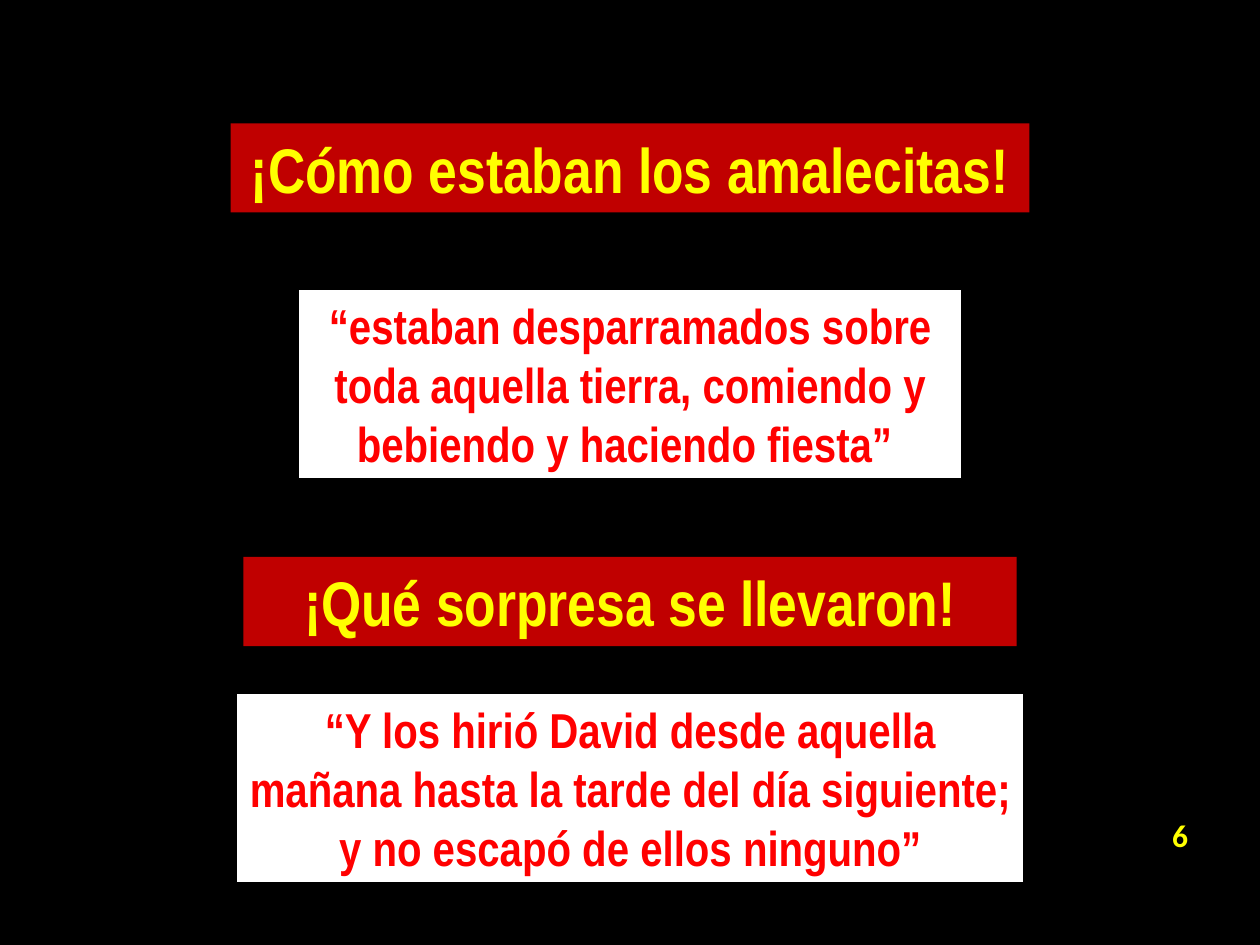
from dataclasses import dataclass

from lxml.etree import SubElement
from pptx import Presentation
from pptx.dml.color import RGBColor
from pptx.enum.shapes import MSO_SHAPE as Shape
from pptx.enum.text import MSO_ANCHOR as Anchor, MSO_AUTO_SIZE as Fit, PP_ALIGN as Align
from pptx.oxml.ns import qn
from pptx.util import Pt

WIDE, HIGH = 720, 540
BLACK, WHITE, DARK = "000000", "FFFFFF", "C00000"
RED, GOLD = "FF0000", "FFFF00"


@dataclass
class Style:
    font: str
    size: float
    ink: str
    edge: float


@dataclass
class Look:
    style: Style
    high: float
    fill: str
    line: str | None


@dataclass
class Panel:
    look: Look
    top: float
    wide: float
    text: str


HEAD = Look(Style("Arial Narrow", 36, GOLD, 0.75), 50.9, DARK, None)
QUOTE = Look(Style("Arial Narrow", 28, RED, 0.25), 108.7, WHITE, BLACK)
COUNT = Style("Calibri", 18, GOLD, 0.75)

PANELS = [
    Panel(HEAD, 70.5, 456.5, "¡Cómo estaban los amalecitas!"),
    Panel(QUOTE, 165, 380, "“estaban desparramados sobre toda aquella tierra, "
          "comiendo y bebiendo y haciendo fiesta” "),
    Panel(HEAD, 318.3, 442, "¡Qué sorpresa se llevaron!"),
    Panel(QUOTE, 396, 450.5, "“Y los hirió David desde aquella mañana hasta la tarde "
          "del día siguiente; y no escapó de ellos ninguno”"),
]


def paint(fill, tint: str) -> None:
    fill.solid()
    fill.fore_color.rgb = RGBColor.from_string(tint)


def write(frame, text: str, style: Style, align: Align) -> None:
    """Add one bold run whose letters are outlined in their own colour."""
    frame.word_wrap = True
    frame.vertical_anchor = Anchor.MIDDLE
    para = frame.paragraphs[0]
    para.alignment = align
    run = para.add_run()
    run.text = text
    font = run.font
    font.name, font.size, font.bold = style.font, Pt(style.size), True
    paint(font.fill, style.ink)
    props = run._r.get_or_add_rPr()
    edge = SubElement(props, qn("a:ln"), w=str(int(Pt(style.edge))))
    tint = SubElement(edge, qn("a:solidFill"))
    SubElement(tint, qn("a:srgbClr"), val=style.ink)
    props.insert(0, edge)


def draw(slide, panel: Panel) -> None:
    look = panel.look
    box = slide.shapes.add_shape(
        Shape.RECTANGLE, Pt((WIDE - panel.wide) / 2), Pt(panel.top),
        Pt(panel.wide), Pt(look.high))
    box.shadow.inherit = False
    paint(box.fill, look.fill)
    if look.line:
        paint(box.line.fill, look.line)
        box.line.width = Pt(1.5)
    else:
        box.line.fill.background()
    write(box.text_frame, panel.text, look.style, Align.CENTER)
    box.text_frame.auto_size = Fit.SHAPE_TO_FIT_TEXT


def main() -> None:
    deck = Presentation()
    deck.slide_width, deck.slide_height = Pt(WIDE), Pt(HIGH)
    slide = deck.slides.add_slide(deck.slide_layouts[6])
    paint(slide.background.fill, BLACK)
    count = slide.shapes.add_textbox(Pt(653), Pt(462.2), Pt(33), Pt(29.5))
    write(count.text_frame, "6", COUNT, Align.RIGHT)
    for panel in PANELS:
        draw(slide, panel)
    deck.save("out.pptx")


if __name__ == "__main__":
    main()
